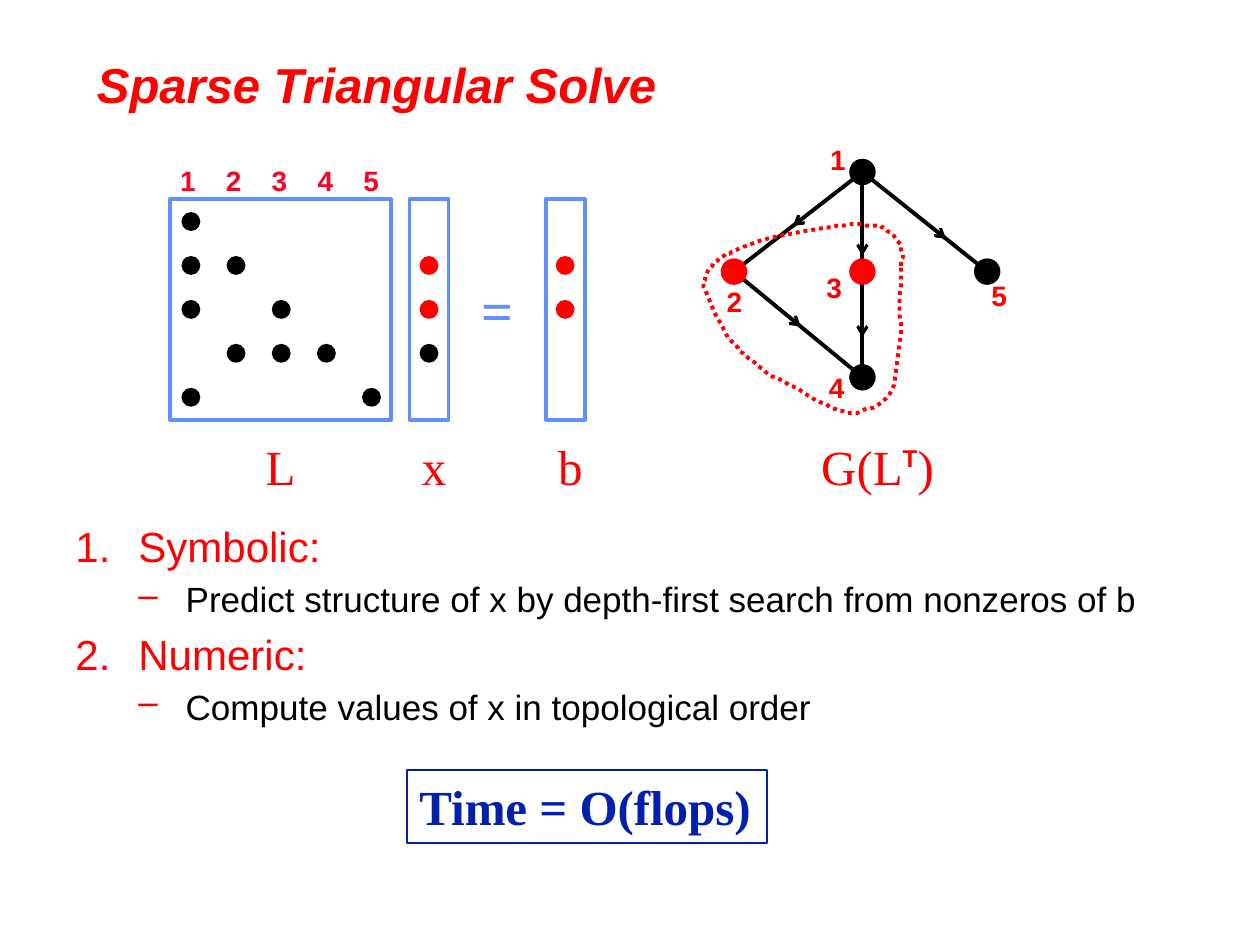
import pptx
import pptx.dml.color
import pptx.enum.dml
import pptx.enum.shapes
import pptx.enum.text
import pptx.oxml.ns
import pptx.util
from lxml import etree

Pt = pptx.util.Pt
qn = pptx.oxml.ns.qn
RGBColor = pptx.dml.color.RGBColor
SHAPES = pptx.enum.shapes.MSO_SHAPE

RED = RGBColor(0xFF, 0x00, 0x00)
CRIMSON = RGBColor(0xFC, 0x01, 0x28)
BLACK = RGBColor(0x00, 0x00, 0x00)
SKY = RGBColor(0x61, 0x8F, 0xFD)
NAVY = RGBColor(0x02, 0x1F, 0xAE)
SANS = "Arial"
SERIF = "Times New Roman"

# Matrix grid: centre of the first entry, and the steps between entries
FIRST_X, FIRST_Y = 109.1, 126.6
COLUMN_STEP, ROW_STEP = 25.8, 25.1
MATRIX_TOP, MATRIX_SIZE = 113.8, 126
L_ENTRIES = [(1, 1), (2, 1), (2, 2), (3, 1), (3, 3),
             (4, 2), (4, 3), (4, 4), (5, 1), (5, 5)]
# Vectors: left edge, and the colour of the entry in each filled row
VECTORS = [(234, {2: RED, 3: RED, 4: BLACK}), (311.8, {2: RED, 3: RED})]
VECTOR_WIDTH = 22.3

# Graph nodes: centre x, centre y, colour, label left, label top
NODES = {1: (492.8, 98.3, BLACK, 467.3, 77.8),
         2: (419.4, 155.2, RED, 408.2, 159.1),
         3: (492.8, 155.2, RED, 465.1, 151.2),
         4: (492.8, 215.6, BLACK, 466.6, 208.1),
         5: (564.1, 155.2, BLACK, 559.4, 155.5)}
# Graph edges: from, to, and where along the edge its arrow starts and ends
EDGES = [(1, 2, 0.32, 0.54), (1, 3, 0.37, 0.84), (1, 5, 0.48, 0.67),
         (2, 4, 0.33, 0.52), (3, 4, 0.45, 0.62)]
# Outline around the nodes reached from b
REACH = [(515, 152.6), (514.2, 174.5), (514.2, 196.5), (508.3, 226), (489.6, 235.5),
         (480.2, 234.6), (468.8, 229.6), (451.4, 220.2), (438.5, 213), (428.4, 205.2),
         (421.9, 199.4), (414.7, 190.8), (410.4, 182.2), (402.5, 164.2), (403.2, 158.4),
         (408.2, 149.8), (414, 146.2), (420.5, 143.3), (432.7, 138.2), (467.3, 131),
         (478, 129.4), (487.4, 128.2), (502.6, 129.4), (506.2, 131), (511.2, 135.4),
         (514.6, 140.4), (515.6, 146.2)]

OUTLINE_ITEMS = [
    ("Symbolic:", 0),
    ("Predict structure of x by depth-first search from nonzeros of b", 1),
    ("Numeric:", 0),
    ("Compute values of x in topological order", 1),
]


def style(run, size, color, font=SANS, bold=False, italic=False):
    run.font.size = Pt(size)
    run.font.name = font
    run.font.bold = bold
    run.font.italic = italic
    run.font.color.rgb = color


def add_label(slide, text, left, top, width, height, size, color, font=SANS, bold=False):
    label = slide.shapes.add_textbox(Pt(left), Pt(top), Pt(width), Pt(height))
    label.text_frame.word_wrap = False
    label.text_frame.text = text
    paragraph = label.text_frame.paragraphs[0]
    style(paragraph.runs[0], size, color, font, bold)
    return paragraph


def add_digit(slide, number, left, top, color):
    add_label(slide, str(number), left, top, 23, 26.6, 16, color, bold=True)


def add_dot(slide, x, y, diameter, color):
    dot = slide.shapes.add_shape(SHAPES.OVAL, Pt(x - diameter / 2), Pt(y - diameter / 2),
                                 Pt(diameter), Pt(diameter))
    dot.shadow.inherit = False
    dot.fill.solid()
    dot.fill.fore_color.rgb = color
    dot.line.fill.background()


def add_frame(slide, left, top, width, height, color, weight):
    frame = slide.shapes.add_shape(SHAPES.RECTANGLE, Pt(left), Pt(top), Pt(width), Pt(height))
    frame.shadow.inherit = False
    frame.fill.background()
    frame.line.color.rgb = color
    frame.line.width = Pt(weight)
    return frame


def add_line(slide, start, end, weight, arrow=False):
    line = slide.shapes.add_connector(pptx.enum.shapes.MSO_CONNECTOR.STRAIGHT,
                                      *(Pt(value) for value in (*start, *end)))
    line.line.color.rgb = BLACK
    line.line.width = Pt(weight)
    if arrow:
        etree.SubElement(line.line._get_or_add_ln(), qn("a:tailEnd"), type="arrow")
    etree.SubElement(line._element.spPr, qn("a:effectLst"))


def smooth_loop(points, steps=4):
    """Points along a closed Catmull-Rom curve through the given points."""
    curve = []
    count = len(points)
    for i in range(count):
        corners = [points[(i + k) % count] for k in (-1, 0, 1, 2)]
        for t in (step / steps for step in range(steps)):
            curve.append(tuple(
                b + t * (c - a) / 2 + t * t * (2 * a - 5 * b + 4 * c - d) / 2
                + t ** 3 * (3 * b - a - 3 * c + d) / 2
                for a, b, c, d in zip(*corners)))
    return curve


def add_reach_outline(slide):
    curve = smooth_loop(REACH)
    builder = slide.shapes.build_freeform(*curve[0], scale=float(Pt(1)))
    builder.add_line_segments(curve[1:], close=True)
    reach = builder.convert_to_shape()
    reach.shadow.inherit = False
    reach.fill.background()
    reach.line.color.rgb = RED
    reach.line.width = Pt(2.25)
    reach.line.dash_style = pptx.enum.dml.MSO_LINE.ROUND_DOT


def add_equation(slide):
    # Triangular matrix L with its column numbers
    for row, column in L_ENTRIES:
        add_dot(slide, FIRST_X + (column - 1) * COLUMN_STEP,
                FIRST_Y + (row - 1) * ROW_STEP, 10.8, BLACK)
    add_frame(slide, 97.2, MATRIX_TOP, MATRIX_SIZE, MATRIX_SIZE, SKY, 2.25)
    for column in range(1, 6):
        add_digit(slide, column, 95.8 + (column - 1) * 26.2, 90, CRIMSON)

    # Vectors x and b
    for left, entries in VECTORS:
        for row, color in entries.items():
            add_dot(slide, left + VECTOR_WIDTH / 2, FIRST_Y + (row - 1) * ROW_STEP, 10.8, color)
        add_frame(slide, left, MATRIX_TOP, VECTOR_WIDTH, MATRIX_SIZE, SKY, 2.25)
    add_label(slide, "=", 267.8, 154.1, 32.4, 45.4, 32, SKY, SERIF, bold=True)


def add_graph(slide):
    for source, target, arrow_start, arrow_end in EDGES:
        x1, y1 = NODES[source][:2]
        x2, y2 = NODES[target][:2]
        tail, head = ((x1 + f * (x2 - x1), y1 + f * (y2 - y1)) for f in (arrow_start, arrow_end))
        add_line(slide, (x1, y1), (x2, y2), 2.25)
        add_line(slide, tail, head, 1.75, arrow=True)
    for x, y, color, _, _ in NODES.values():
        add_dot(slide, x, y, 15.1, color)
    add_reach_outline(slide)
    for number, (_, _, _, left, top) in NODES.items():
        add_digit(slide, number, left, top, RED)


def add_captions(slide):
    for name, left in (("L", 144.7), ("x", 234), ("b", 311.8)):
        add_label(slide, name, left, 246.2, 30, 41, 28, RED, SERIF)
    graph_name = add_label(slide, "G(L", 462.2, 246.2, 80.6, 41, 28, RED, SERIF)
    transpose, closing = graph_name.add_run(), graph_name.add_run()
    transpose.text, closing.text = "T", ")"
    style(transpose, 24, RED, bold=True)
    transpose.font._element.set("baseline", "44000")
    style(closing, 28, RED, SERIF)


def add_outline(slide):
    outline = slide.shapes.add_textbox(Pt(36), Pt(293.8), Pt(660), Pt(138.2)).text_frame
    outline.word_wrap = True
    outline.text = "\n".join(text for text, _ in OUTLINE_ITEMS)
    for paragraph, (_, level) in zip(outline.paragraphs, OUTLINE_ITEMS):
        size, color, indent, hanging = ((24, RED, 36, 36), (20, BLACK, 63, 27))[level]
        style(paragraph.runs[0], size, color)
        paragraph.level = level
        paragraph.space_before = Pt(size * 0.2)
        properties = paragraph._p.get_or_add_pPr()
        properties.set("marL", str(Pt(indent)))
        properties.set("indent", str(-Pt(hanging)))
        bullet_color = etree.SubElement(properties, qn("a:buClr"))
        etree.SubElement(bullet_color, qn("a:srgbClr"), val=str(RED))
        if level == 0:
            etree.SubElement(properties, qn("a:buAutoNum"), type="arabicPeriod")
        else:
            etree.SubElement(properties, qn("a:buChar"), char="–")


def add_cost(slide):
    cost = add_frame(slide, 232.6, 439.9, 205.9, 41.8, NAVY, 1).text_frame
    cost.word_wrap = False
    cost.vertical_anchor = pptx.enum.text.MSO_ANCHOR.TOP
    cost.text = "Time = O(flops)"
    cost.paragraphs[0].alignment = pptx.enum.text.PP_ALIGN.LEFT
    style(cost.paragraphs[0].runs[0], 28, NAVY, SERIF, bold=True)


def set_title(slide):
    title = slide.shapes.title
    title.left, title.top, title.width, title.height = Pt(48.2), Pt(23.8), Pt(642.2), Pt(48.2)
    title.text_frame.text = "Sparse Triangular Solve"
    title.text_frame.vertical_anchor = pptx.enum.text.MSO_ANCHOR.MIDDLE
    title.text_frame.paragraphs[0].alignment = pptx.enum.text.PP_ALIGN.LEFT
    style(title.text_frame.paragraphs[0].runs[0], 28, RED, bold=True, italic=True)


def main():
    deck = pptx.Presentation()
    deck.slide_width, deck.slide_height = Pt(720), Pt(540)
    slide = deck.slides.add_slide(deck.slide_layouts[5])
    set_title(slide)
    add_equation(slide)
    add_graph(slide)
    add_captions(slide)
    add_outline(slide)
    add_cost(slide)
    deck.save("out.pptx")


if __name__ == "__main__":
    main()
